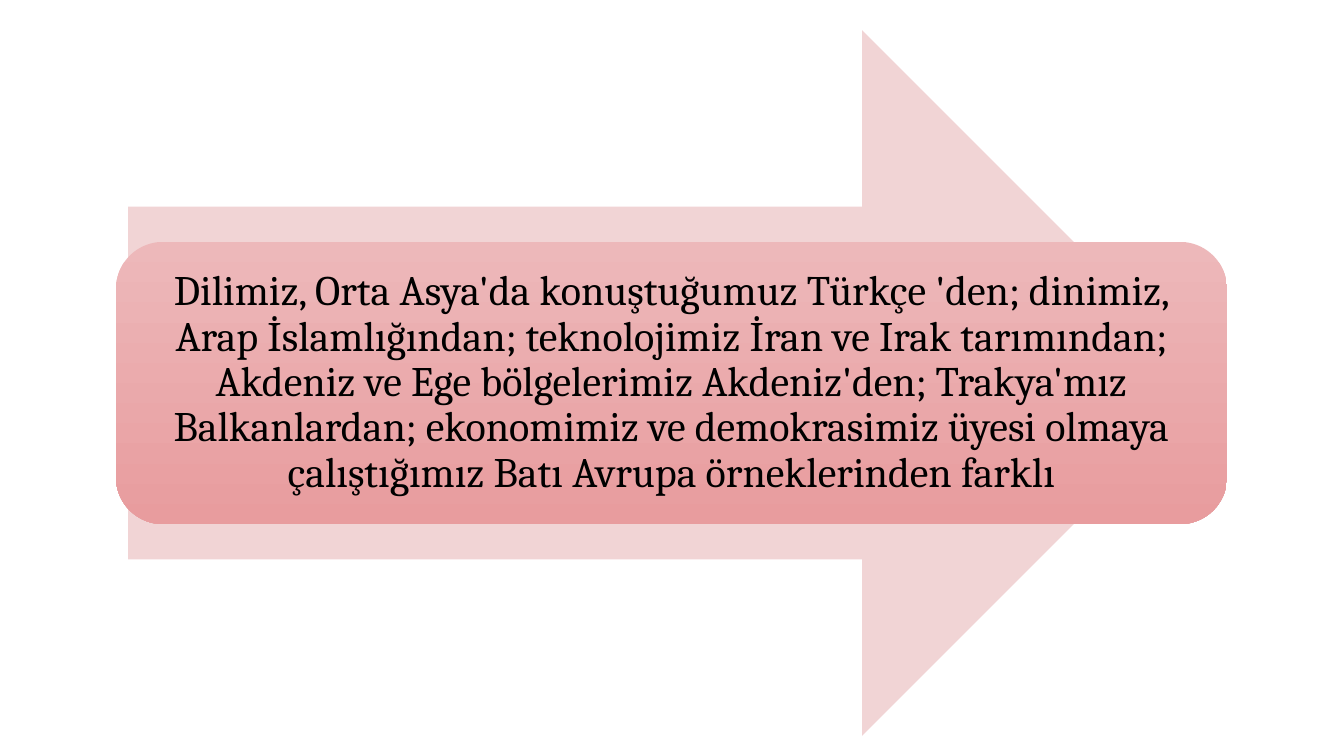
from dataclasses import dataclass

from pptx import Presentation
from pptx import util as u
from pptx.dml import color
from pptx.enum import shapes, text


@dataclass(frozen=True)
class Theme:
    arrow: str = "F1D4D5"
    top: str = "EDB8BA"
    base: str = "E89C9E"
    ink: str = "000000"
    font: str = "Cambria"
    size: int = 30


THEME = Theme()
WORDS = (
    "Dilimiz, Orta Asya'da konuştuğumuz Türkçe 'den; dinimiz, "
    "Arap İslamlığından; teknolojimiz İran ve Irak tarımından; "
    "Akdeniz ve Ege bölgelerimiz Akdeniz'den; Trakya'mız "
    "Balkanlardan; ekonomimiz ve demokrasimiz üyesi olmaya "
    "çalıştığımız Batı Avrupa örneklerinden farklı"
)


def rgb(code):
    return color.RGBColor.from_string(code)


def put(item, values):
    for name, value in values.items():
        setattr(item, name, value)


def add_form(slide, kind, box):
    form = slide.shapes.add_shape(kind, *map(u.Inches, box))
    form.shadow.inherit = False
    form.line.fill.background()
    return form


def add_arrow(slide, box):
    arrow = add_form(slide, shapes.MSO_SHAPE.RIGHT_ARROW, box)
    arrow.fill.solid()
    arrow.fill.fore_color.rgb = rgb(THEME.arrow)


def add_panel(slide, box, words):
    panel = add_form(slide, shapes.MSO_SHAPE.ROUNDED_RECTANGLE, box)
    panel.fill.gradient()
    panel.fill.gradient_angle = 270
    for stop, code in zip(panel.fill.gradient_stops, (THEME.top, THEME.base)):
        stop.color.rgb = rgb(code)
    frame = panel.text_frame
    inset = u.Inches(0.12)
    put(frame, {
        "word_wrap": True,
        "vertical_anchor": text.MSO_ANCHOR.MIDDLE,
        "margin_left": inset,
        "margin_right": inset,
        "margin_top": inset,
        "margin_bottom": inset,
    })
    para = frame.paragraphs[0]
    put(para, {"alignment": text.PP_ALIGN.CENTER, "line_spacing": 0.9})
    run = para.add_run()
    run.text = words
    put(run.font, {"name": THEME.font, "size": u.Pt(THEME.size)})
    run.font.color.rgb = rgb(THEME.ink)


def add_scene(slide, box):
    left, top, width, height = box
    edge = 0.12
    deep = height * 0.4
    add_arrow(slide, (left + edge, top, width - 2 * edge, height))
    add_panel(slide, (left, top + (height - deep) / 2, width, deep), WORDS)


def main():
    deck = Presentation()
    put(deck, {"slide_width": u.Inches(13.33), "slide_height": u.Inches(7.5)})
    slide = deck.slides.add_slide(deck.slide_layouts[6])
    add_scene(slide, (1.15, 0.3, 11.02, 7))
    deck.save("out.pptx")


if __name__ == "__main__":
    main()
